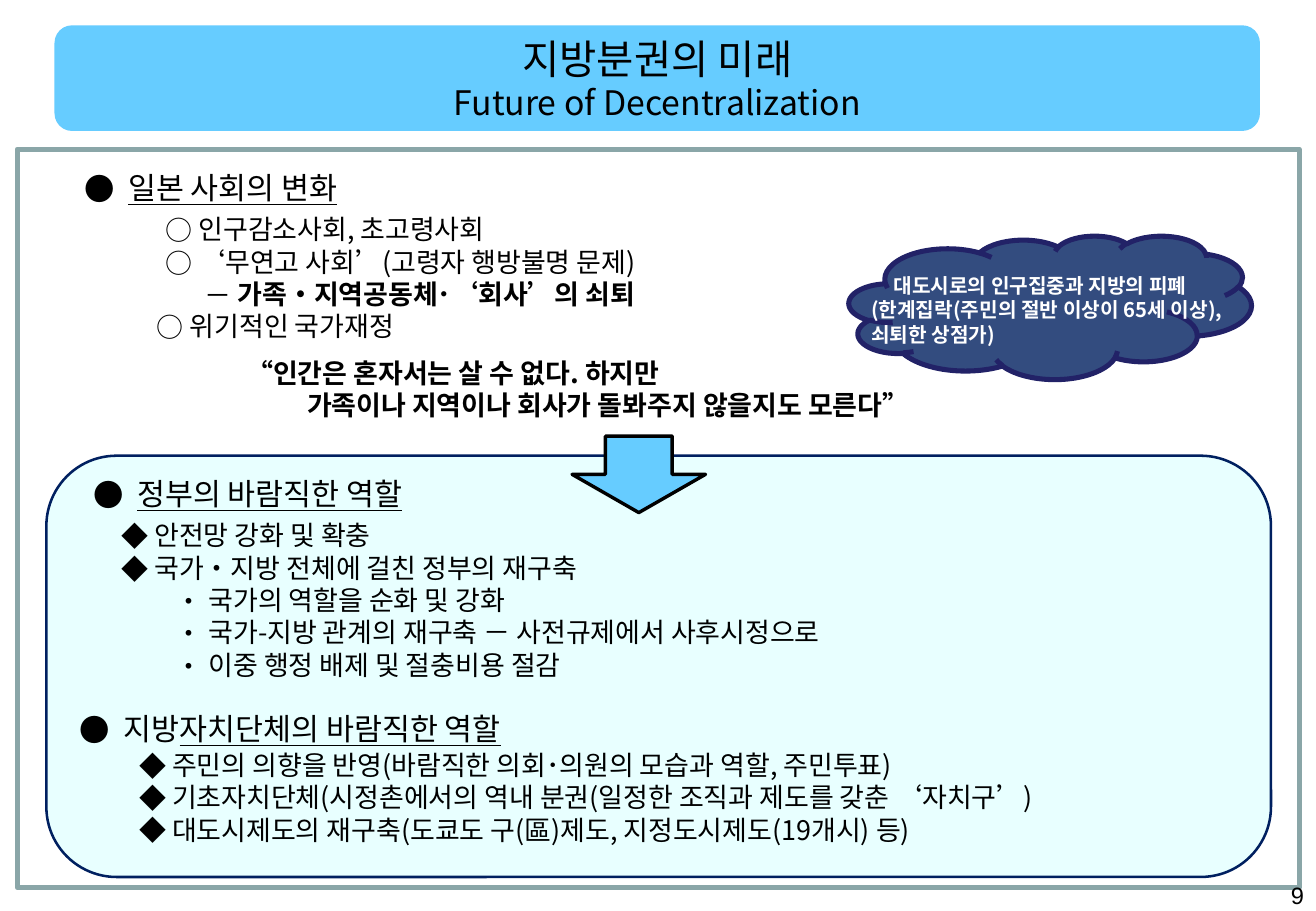
from dataclasses import dataclass

from lxml.etree import SubElement
from pptx import Presentation
from pptx.dml.color import RGBColor
from pptx.enum.shapes import MSO_SHAPE
from pptx.enum.text import MSO_ANCHOR, MSO_AUTO_SIZE, PP_ALIGN
from pptx.oxml.ns import qn
from pptx.shapes.base import BaseShape
from pptx.slide import Slide
from pptx.util import Cm, Pt

COLORS = {
    "black": "000000",
    "white": "FFFFFF",
    "sky": "66CCFF",
    "ice": "CCFFFF",
    "navy": "002060",
    "indigo": "222267",
    "sage": "8AA6A8",
}
KOREAN_FONT = "Noto Sans CJK KR"
LINE_HEIGHT = 1.2
ITEM_HANG = 0.69
HEADING_HANG = 0.92


@dataclass(frozen=True)
class Box:
    left: float
    top: float
    width: float
    height: float


@dataclass(frozen=True)
class Panel:
    kind: MSO_SHAPE
    box: Box
    fill: str = ""
    opacity: int = 100
    line: str = ""
    line_width: float = 0


@dataclass(frozen=True)
class Line:
    text: str
    bullet: str = ""
    indent: float = 0
    size: float = 16
    pitch: float = 16
    bold: bool = False
    color: str = "black"
    underlined: str = ""
    hang: float = ITEM_HANG
    align: PP_ALIGN = PP_ALIGN.LEFT
    font: str = KOREAN_FONT


@dataclass(frozen=True)
class TextBlock:
    box: Box
    lines: list[Line]
    anchor: MSO_ANCHOR = MSO_ANCHOR.TOP


def heading(underlined: str, plain: str = "", pitch: float = 20) -> Line:
    return Line(plain, "●", size=18, pitch=pitch, underlined=underlined, hang=HEADING_HANG)


def title_line(text: str, size: float) -> Line:
    return Line(text, size=size, pitch=size, align=PP_ALIGN.CENTER)


BANNER = Box(1.14, 0.53, 25.2, 2.21)

PANELS = [
    Panel(MSO_SHAPE.ROUNDED_RECTANGLE, Box(0.97, 9.53, 25.6, 8.81), "ice", 45, "navy", 1.5),
    Panel(MSO_SHAPE.ROUNDED_RECTANGLE, BANNER, "sky"),
    Panel(MSO_SHAPE.RECTANGLE, Box(0.36, 3.12, 26.8, 15.44), line="sage", line_width=3),
    Panel(MSO_SHAPE.CLOUD, Box(17.75, 4.93, 8.41, 3), "navy", 80, "indigo", 3),
    Panel(MSO_SHAPE.DOWN_ARROW, Box(11.96, 9.12, 2.79, 1.6), "sky", 100, "black", 2),
]

TITLE = TextBlock(
    BANNER,
    [title_line("지방분권의 미래", 24), title_line("Future of Decentralization", 20)],
    MSO_ANCHOR.MIDDLE,
)

LISTS = [
    TextBlock(Box(3.28, 4.32, 14, 3), [
        Line("인구감소사회, 초고령사회", "○", 0.18),
        Line("‘무연고 사회’(고령자 행방불명 문제)", "○", 0.18),
        Line("가족・지역공동체･‘회사’의 쇠퇴", "－", 1, bold=True),
        Line("위기적인 국가재정", "○"),
    ]),
    TextBlock(Box(2.54, 10.72, 23, 3.66), [
        Line("안전망 강화 및 확충", "◆"),
        Line("국가・지방 전체에 걸친 정부의 재구축", "◆"),
        Line("국가의 역할을 순화 및 강화", "・", 1.13),
        Line("국가-지방 관계의 재구축 － 사전규제에서 사후시정으로", "・", 1.13),
        Line("이중 행정 배제 및 절충비용 절감", "・", 1.13),
    ]),
    TextBlock(Box(2.91, 15.52, 23, 2.29), [
        Line("주민의 의향을 반영(바람직한 의회･의원의 모습과 역할, 주민투표)", "◆"),
        Line("기초자치단체(시정촌에서의 역내 분권(일정한 조직과 제도를 갖춘 ‘자치구’)", "◆"),
        Line("대도시제도의 재구축(도쿄도 구(區)제도, 지정도시제도(19개시) 등)", "◆"),
    ]),
]

TEXT_BOXES = [
    TextBlock(Box(1.76, 3.33, 20, 1.09), [heading("일본 사회의 변화")]),
    TextBlock(Box(1.95, 9.73, 9, 1.09), [heading("정부의 바람직한 역할")]),
    TextBlock(Box(1.67, 14.73, 20, 1.02),
              [heading("자치단체의 바람직한 역할", "지방", 18)]),
    TextBlock(Box(5.15, 7.32, 20, 1.63), [
        Line("“인간은 혼자서는 살 수 없다. 하지만", bold=True),
        Line("가족이나 지역이나 회사가 돌봐주지 않을지도 모른다”", indent=1.27, bold=True),
    ]),
    TextBlock(Box(18.21, 5.46, 8.48, 1.9), [
        Line("대도시로의 인구집중과 지방의 피폐", indent=0.47, size=12, pitch=15,
             bold=True, color="white"),
        Line("(한계집락(주민의 절반 이상이 65세 이상), 쇠퇴한 상점가)", size=12, pitch=12,
             bold=True, color="white"),
    ]),
    TextBlock(Box(21.11, 18.39, 6.15, 0.66),
              [Line("9", size=14, pitch=14, align=PP_ALIGN.RIGHT, font="Arial")],
              MSO_ANCHOR.MIDDLE),
]


def lengths(box: Box) -> tuple[Cm, Cm, Cm, Cm]:
    return Cm(box.left), Cm(box.top), Cm(box.width), Cm(box.height)


def rgb(name: str) -> RGBColor:
    return RGBColor.from_string(COLORS[name])


def draw_panel(slide: Slide, panel: Panel) -> None:
    shape = slide.shapes.add_shape(panel.kind, *lengths(panel.box))
    shape.shadow.inherit = False
    if panel.fill:
        shape.fill.solid()
        shape.fill.fore_color.rgb = rgb(panel.fill)
        if panel.opacity < 100:
            color = shape.fill._xPr.find(qn("a:solidFill"))[0]
            SubElement(color, qn("a:alpha"), val=str(panel.opacity * 1000))
    else:
        shape.fill.background()
    if panel.line:
        shape.line.color.rgb = rgb(panel.line)
        shape.line.width = Pt(panel.line_width)
    else:
        shape.line.fill.background()


def write_line(paragraph, line: Line) -> None:
    paragraph.text = line.text
    if line.underlined:
        run = paragraph.add_run()
        run.text = line.underlined
        run.font.underline = True
    paragraph.alignment = line.align
    paragraph.line_spacing = Pt(round(line.pitch * LINE_HEIGHT, 1))
    paragraph.space_before = paragraph.space_after = Pt(0)
    properties = paragraph._p.get_or_add_pPr()
    hang = line.hang if line.bullet else 0
    properties.set("marL", str(Cm(line.indent + hang)))
    properties.set("indent", str(-Cm(hang)))
    if line.bullet:
        SubElement(properties, qn("a:buFont"), typeface=line.font)
        SubElement(properties, qn("a:buChar"), char=line.bullet)
    for run in paragraph.runs:
        run.font.size = Pt(line.size)
        run.font.bold = line.bold
        run.font.color.rgb = rgb(line.color)
        run.font.name = line.font
        SubElement(run.font._element, qn("a:ea"), typeface=line.font)


def fill_text(shape: BaseShape, block: TextBlock) -> None:
    shape.left, shape.top, shape.width, shape.height = lengths(block.box)
    frame = shape.text_frame
    frame.word_wrap = True
    frame.auto_size = MSO_AUTO_SIZE.NONE
    frame.vertical_anchor = block.anchor
    frame.margin_left = frame.margin_right = 0
    frame.margin_top = frame.margin_bottom = Cm(0.13)
    frame.text = "\n".join(line.text for line in block.lines)
    for paragraph, line in zip(frame.paragraphs, block.lines):
        write_line(paragraph, line)


def main() -> None:
    presentation = Presentation()
    presentation.slide_width, presentation.slide_height = Cm(27.51), Cm(19.05)
    slide = presentation.slides.add_slide(presentation.slide_layouts.get_by_name("Comparison"))
    title, *bodies = list(slide.placeholders)
    for panel in PANELS:
        draw_panel(slide, panel)
    for placeholder, block in zip([title, *bodies], [TITLE, *LISTS]):
        fill_text(placeholder, block)
        slide.shapes.element.append(placeholder.element)
    for unused in bodies[len(LISTS):]:
        slide.shapes.element.remove(unused.element)
    for block in TEXT_BOXES:
        fill_text(slide.shapes.add_textbox(*lengths(block.box)), block)
    presentation.save("out.pptx")


if __name__ == "__main__":
    main()
